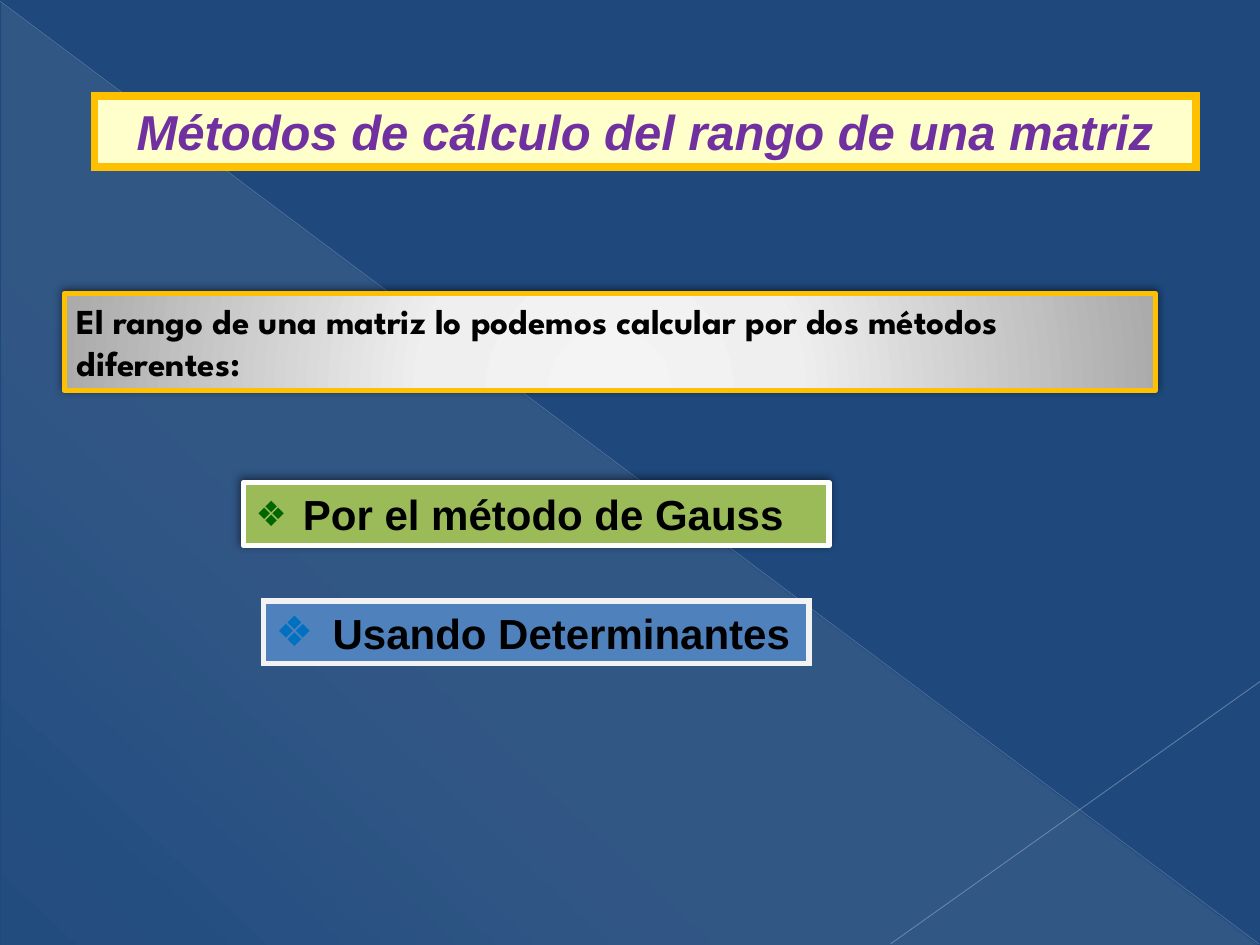
"""Build a slide on the two methods for calculating the rank of a matrix."""
from dataclasses import dataclass
from typing import Optional

from lxml.etree import SubElement
from pptx import Presentation
from pptx.dml.color import RGBColor
from pptx.enum.shapes import MSO_CONNECTOR as Connector, MSO_SHAPE as Preset
from pptx.enum.text import MSO_ANCHOR as Anchor, MSO_AUTO_SIZE as AutoSize, PP_ALIGN as Align
from pptx.oxml.ns import qn
from pptx.util import Pt

NAVY = RGBColor(0x1F, 0x49, 0x7D)
CREAM = RGBColor(0xEE, 0xEC, 0xE1)
MIST = RGBColor(0xAD, 0xB6, 0xCE)
PALE_MIST = RGBColor(0xB6, 0xBE, 0xD3)
SILVER = RGBColor(0xF4, 0xF4, 0xF4)
LIGHT_GRAY = RGBColor(0xEF, 0xEF, 0xEF)
GRAY = RGBColor(0xAB, 0xAB, 0xAB)
GOLD = RGBColor(0xFF, 0xC0, 0x00)
YELLOW = RGBColor(0xFF, 0xFF, 0xCC)
PURPLE = RGBColor(0x70, 0x30, 0xA0)
GREEN = RGBColor(0x9B, 0xBB, 0x59)
DARK_GREEN = RGBColor(0x00, 0x66, 0x00)
BLUE = RGBColor(0x4F, 0x81, 0xBD)
BRIGHT_BLUE = RGBColor(0x00, 0x70, 0xC0)
OFF_WHITE = RGBColor(0xF2, 0xF2, 0xF2)
WHITE = RGBColor(0xFF, 0xFF, 0xFF)
BLACK = RGBColor(0x00, 0x00, 0x00)


@dataclass(frozen=True)
class Stop:
    position: int
    color: RGBColor
    opacity: int = 100


@dataclass(frozen=True)
class Bullet:
    color: RGBColor
    percent: int
    indent: float


@dataclass(frozen=True)
class Panel:
    text: str
    left: float
    top: float
    width: float
    height: float
    border: RGBColor
    size: float
    fill: Optional[RGBColor] = None
    border_width: float = 3
    font: str = "Arial"
    color: RGBColor = BLACK
    italic: bool = False
    align: Align = Align.LEFT
    space_before: float = 1.5
    shadow: bool = False
    bullet: Optional[Bullet] = None


VEIL = [Stop(0, CREAM, 10), Stop(70, CREAM, 8), Stop(100, CREAM, 1)]
METAL = [Stop(0, SILVER), Stop(34, LIGHT_GRAY), Stop(100, GRAY)]
PANELS = [
    Panel("El rango de una matriz lo podemos calcular por dos métodos diferentes:",
          36.7, 167.8, 623.5, 55.4, GOLD, 20, font="League Spartan",
          space_before=0, shadow=True),
    Panel("Métodos de cálculo del rango de una matriz", 54, 54.7, 629.3, 41, GOLD, 28,
          fill=YELLOW, border_width=4.5, color=PURPLE, italic=True, align=Align.CENTER),
    Panel("Por el método de Gauss", 139, 275.8, 334.8, 36, WHITE, 24, fill=GREEN,
          shadow=True, bullet=Bullet(DARK_GREEN, 83, 27)),
    Panel("Usando Determinantes", 150.5, 343.4, 311.8, 36, OFF_WHITE, 24, fill=BLUE,
          bullet=Bullet(BRIGHT_BLUE, 100, 32.5)),
]


def add_node(parent, tag: str, **attributes):
    """Append a DrawingML element and return it."""
    return SubElement(parent, qn(f"a:{tag}"), {key: str(value) for key, value in attributes.items()})


def add_color(parent, color: RGBColor, opacity: int = 100) -> None:
    """Append a colour with its opacity in percent."""
    node = add_node(parent, "srgbClr", val=color)
    if opacity < 100:
        add_node(node, "alpha", val=opacity * 1000)


def fill_gradient(shape, stops: list[Stop], angle: Optional[int] = None) -> None:
    """Fill with a linear gradient at an angle, or a circular one centred below."""
    properties = shape._element.spPr
    gradient = add_node(properties, "gradFill", rotWithShape=1)
    properties.insert(2, gradient)
    stop_list = add_node(gradient, "gsLst")
    for stop in stops:
        add_color(add_node(stop_list, "gs", pos=stop.position * 1000), stop.color, stop.opacity)
    if angle is None:
        circle = add_node(gradient, "path", path="circle")
        add_node(circle, "fillToRect", l=50000, t=155000, r=50000, b=-55000)
    else:
        add_node(gradient, "lin", ang=angle * 60000, scaled=0)


def write_text(shape, text: str, *, font: str, size: float, color: RGBColor, italic: bool,
               align: Align, space_before: float, bullet: Optional[Bullet]) -> None:
    """Write one bold paragraph with its format and optional bullet."""
    frame = shape.text_frame
    frame.word_wrap = True
    frame.auto_size = AutoSize.SHAPE_TO_FIT_TEXT
    frame.vertical_anchor = Anchor.TOP
    paragraph = frame.paragraphs[0]
    paragraph.alignment = align
    paragraph.space_before = Pt(space_before)
    run = paragraph.add_run()
    run.text = text
    run.font.name = font
    run.font.size = Pt(size)
    run.font.bold = True
    run.font.italic = italic
    run.font.color.rgb = color
    if bullet:
        properties = paragraph._p.get_or_add_pPr()
        indent = Pt(bullet.indent)
        properties.set("marL", str(indent))
        properties.set("indent", str(-indent))
        add_color(add_node(properties, "buClr"), bullet.color)
        add_node(properties, "buSzPct", val=bullet.percent * 1000)
        add_node(properties, "buFont", typeface="Arial")
        add_node(properties, "buChar", char="❖")


def draw_panel(slide, panel: Panel) -> None:
    """Draw a bordered panel with its text."""
    shape = slide.shapes.add_shape(Preset.RECTANGLE, Pt(panel.left), Pt(panel.top),
                                   Pt(panel.width), Pt(panel.height))
    if panel.fill is None:
        fill_gradient(shape, METAL)
    else:
        shape.fill.solid()
        shape.fill.fore_color.rgb = panel.fill
    shape.line.color.rgb = panel.border
    shape.line.width = Pt(panel.border_width)
    shape.shadow.inherit = False
    properties = shape._element.spPr
    if panel.shadow:
        shadow = add_node(properties.find(qn("a:effectLst")), "outerShdw", blurRad=Pt(5),
                          dist=Pt(2), dir=245 * 60000, rotWithShape=0)
        add_color(shadow, BLACK, 50)
    else:
        add_node(properties.find(qn("a:ln")), "miter", lim=800000)
    write_text(shape, panel.text, font=panel.font, size=panel.size, color=panel.color,
               italic=panel.italic, align=panel.align, space_before=panel.space_before,
               bullet=panel.bullet)


def draw_line(slide, start: tuple[float, float], end: tuple[float, float],
              color: RGBColor, width: float, opacity: int) -> None:
    """Draw a thin translucent line."""
    line = slide.shapes.add_connector(Connector.STRAIGHT, *map(Pt, start + end))
    line.line.color.rgb = color
    line.line.width = Pt(width)
    properties = line._element.spPr
    add_node(next(properties.iter(qn("a:srgbClr"))), "alpha", val=opacity * 1000)
    add_node(properties, "effectLst")


def draw_backdrop(slide) -> None:
    """Draw the navy background, its veil and its two lines."""
    slide.background.fill.solid()
    slide.background.fill.fore_color.rgb = NAVY
    veil = slide.shapes.add_shape(Preset.RIGHT_TRIANGLE, Pt(0.7), Pt(1.4), Pt(718.6), Pt(538.6))
    fill_gradient(veil, VEIL, angle=133)
    veil.line.fill.background()
    veil.shadow.inherit = False
    draw_line(slide, (0, 0.7), (719.3, 539.3), MIST, 0.39, 35)
    draw_line(slide, (720, 389.5), (509, 539.3), PALE_MIST, 0.47, 45)


def main() -> None:
    """Build and save the slide."""
    deck = Presentation()
    deck.slide_width, deck.slide_height = Pt(720), Pt(540)
    slide = deck.slides.add_slide(deck.slide_layouts[6])
    draw_backdrop(slide)
    for panel in PANELS:
        draw_panel(slide, panel)
    deck.save("out.pptx")


if __name__ == "__main__":
    main()
